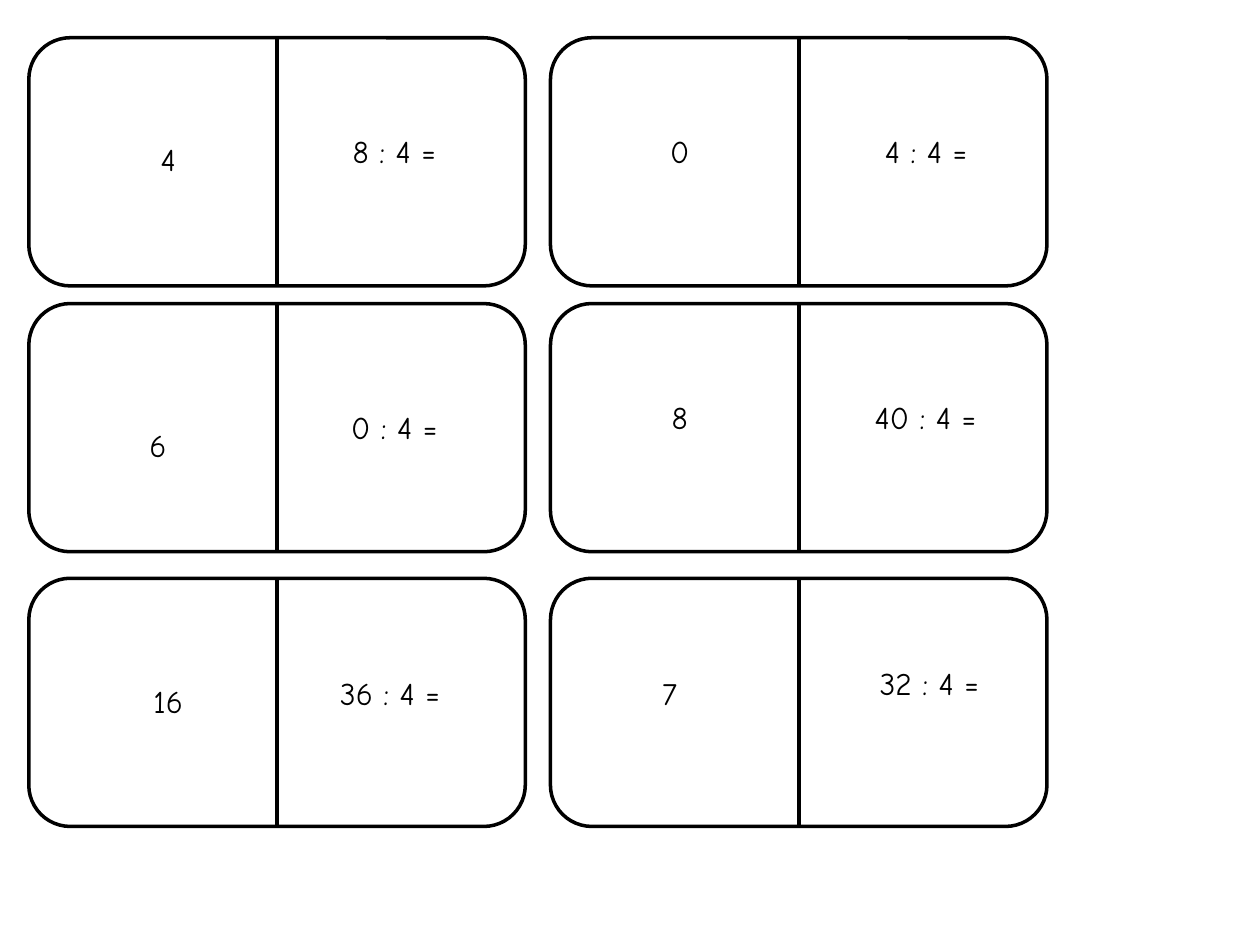
from lxml import etree
from pptx import Presentation
from pptx.dml.color import RGBColor
from pptx.enum import shapes, text
from pptx.oxml.ns import qn
from pptx.util import Pt

INK = "000000"
FONT = "Comic Neue"
WIDE, HIGH = 283.7, 141.8
LEFTS = (16.5, 314.6)
TOPS = (21.6, 173.5, 330.5)
TEXT_HIGH = 29

# Rows of dominoes; each half is (text, centre x, top y) within its card
CARDS = [
    [(("4", 79.6, 54.7), ("8 : 4 =", 208.8, 50.4)),
     (("0", 73.8, 50.4), ("4 : 4 =", 214.6, 50.4))],
    [(("6", 73.8, 66.2), ("0 : 4 =", 208.8, 56.2)),
     (("8", 73.8, 50.4), ("40 : 4 =", 214.2, 50.4))],
    [(("16", 79.6, 55.4), ("36 : 4 =", 206.3, 51.1)),
     (("7", 68, 51.1), ("32 : 4 =", 216.4, 45.4))],
]


def color(code):
    return RGBColor.from_string(code)


def outline(item):
    item.line.color.rgb = color(INK)
    item.line.width = Pt(2)


def add_card(slide, left, top):
    """Draw a rounded domino with a line down its middle."""
    group = slide.shapes.add_group_shape()
    box = group.shapes.add_shape(
        shapes.MSO_SHAPE.ROUNDED_RECTANGLE,
        Pt(left), Pt(top), Pt(WIDE), Pt(HIGH))
    box.shadow.inherit = False
    box.fill.background()
    outline(box)
    mid = Pt(left + WIDE / 2)
    line = group.shapes.add_connector(
        shapes.MSO_CONNECTOR.STRAIGHT, mid, Pt(top), mid, Pt(top + HIGH))
    line.begin_connect(box, 0)
    line.end_connect(box, 2)
    outline(line)
    etree.SubElement(line._element.spPr, qn("a:effectLst"))


def add_label(slide, words, mid, top, wide, wrap):
    box = slide.shapes.add_textbox(
        Pt(mid - wide / 2), Pt(top), Pt(wide), Pt(TEXT_HIGH))
    frame = box.text_frame
    frame.word_wrap = wrap
    frame.auto_size = text.MSO_AUTO_SIZE.SHAPE_TO_FIT_TEXT
    par = frame.paragraphs[0]
    par.text = words
    par.alignment = text.PP_ALIGN.CENTER
    par.font.name = FONT
    par.font.size = Pt(18)
    par.font.color.rgb = color(INK)


def main():
    deck = Presentation()
    deck.slide_width, deck.slide_height = Pt(720), Pt(540)
    slide = deck.slides.add_slide(deck.slide_layouts[6])
    for top, row in zip(TOPS, CARDS):
        for left, (answer, task) in zip(LEFTS, row):
            add_card(slide, left, top)
            words, x, y = answer
            add_label(slide, words, left + x, top + y, 45.4, True)
            words, x, y = task
            wide = 67.7 if len(words) == 7 else 78.5
            add_label(slide, words, left + x, top + y, wide, False)
    deck.save("out.pptx")


if __name__ == "__main__":
    main()
